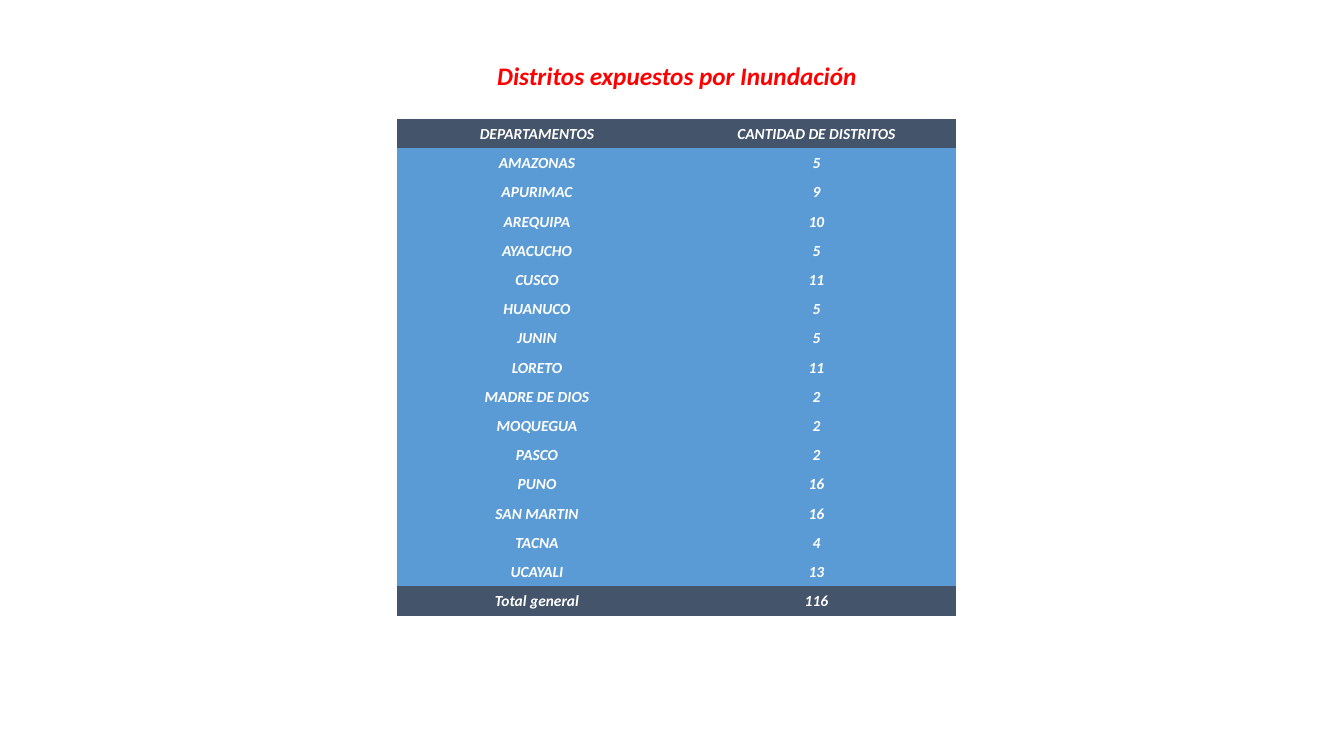
"""Builds a slide with a table of districts exposed to flooding."""
from pptx import Presentation
from pptx.dml.color import RGBColor
from pptx.enum.text import MSO_ANCHOR, MSO_AUTO_SIZE, PP_ALIGN
from pptx.util import Inches, Pt

CENTER = PP_ALIGN.CENTER
MIDDLE = MSO_ANCHOR.MIDDLE
FIT_SHAPE = MSO_AUTO_SIZE.SHAPE_TO_FIT_TEXT
RED = RGBColor(0xFF, 0x00, 0x00)
WHITE = RGBColor(0xFF, 0xFF, 0xFF)
SLATE = RGBColor(0x44, 0x54, 0x6A)
BLUE = RGBColor(0x5B, 0x9B, 0xD5)
NO_STYLE_NO_GRID = "{2D5ABB26-0587-4C30-8999-92F81FD0307C}"

ROWS = [
    ("DEPARTAMENTOS", "CANTIDAD DE DISTRITOS"),
    ("AMAZONAS", "5"),
    ("APURIMAC", "9"),
    ("AREQUIPA", "10"),
    ("AYACUCHO", "5"),
    ("CUSCO", "11"),
    ("HUANUCO", "5"),
    ("JUNIN", "5"),
    ("LORETO", "11"),
    ("MADRE DE DIOS", "2"),
    ("MOQUEGUA", "2"),
    ("PASCO", "2"),
    ("PUNO", "16"),
    ("SAN MARTIN", "16"),
    ("TACNA", "4"),
    ("UCAYALI", "13"),
    ("Total general", "116"),
]


def px(length):
    return round(length * Inches(1) / 100.8)


def format_paragraph(paragraph, size, color):
    paragraph.alignment = CENTER
    font = paragraph.font
    font.name = "Calibri"
    font.size = Pt(size)
    font.bold = True
    font.italic = True
    font.color.rgb = color


presentation = Presentation()
presentation.slide_width = px(1344)
presentation.slide_height = px(756)
slide = presentation.slides.add_slide(presentation.slide_layouts[5])

title = slide.shapes.title
title.left, title.top, title.width, title.height = px(485), px(55), px(384), px(40)
title.text_frame.text = "Distritos expuestos por Inundación"
title.text_frame.word_wrap = False
title.text_frame.auto_size = FIT_SHAPE
format_paragraph(title.text_frame.paragraphs[0], 18, RED)

table_frame = slide.shapes.add_table(len(ROWS), 2, px(397), px(119), px(559), px(497))
table_frame.element.xpath(".//a:tableStyleId")[0].text = NO_STYLE_NO_GRID
table = table_frame.table
table.horz_banding = False
table.last_row = True
table.columns[0].width = px(280)
table.columns[1].width = px(279)

for row_index, values in enumerate(ROWS):
    is_edge_row = row_index in (0, len(ROWS) - 1)
    for column_index, value in enumerate(values):
        cell = table.cell(row_index, column_index)
        cell.text = value
        cell.vertical_anchor = MIDDLE
        cell.margin_left = cell.margin_right = cell.margin_top = px(1)
        cell.margin_bottom = 0
        cell.fill.solid()
        cell.fill.fore_color.rgb = SLATE if is_edge_row else BLUE
        format_paragraph(cell.text_frame.paragraphs[0], 11, WHITE)

presentation.save("out.pptx")
